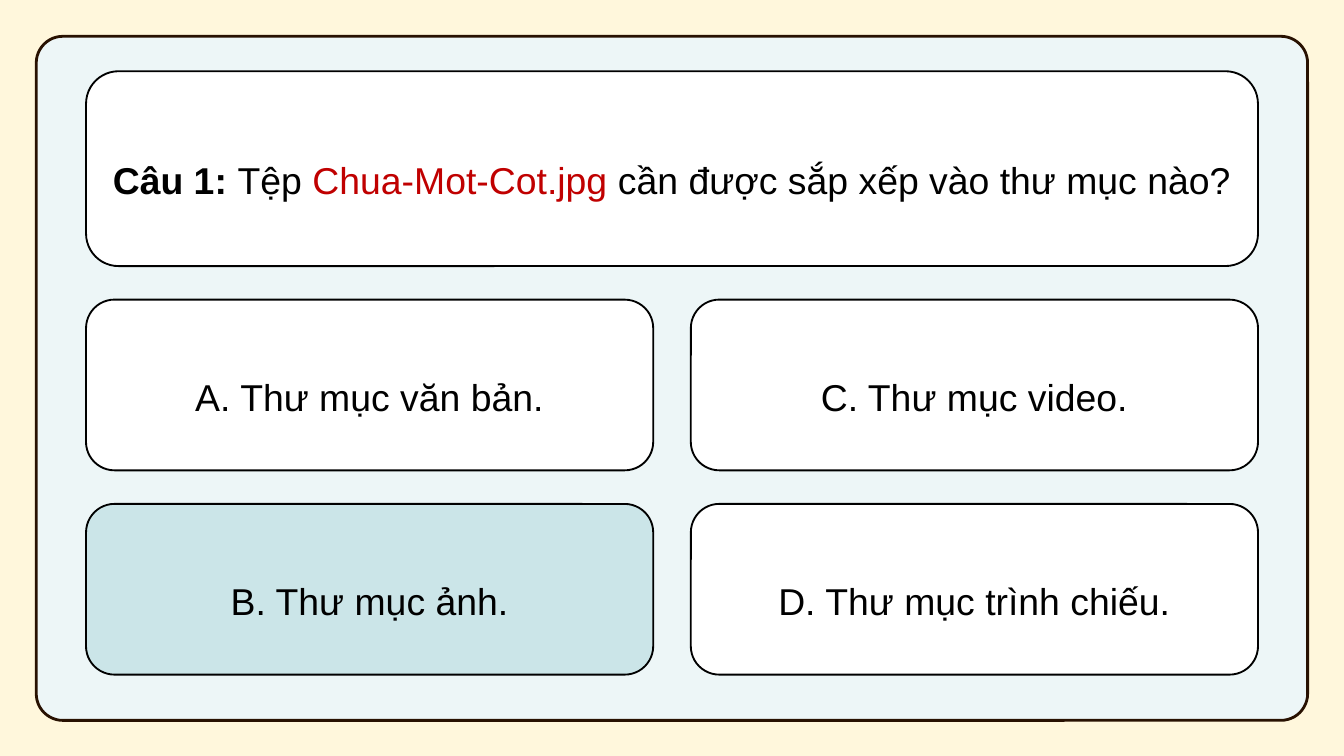
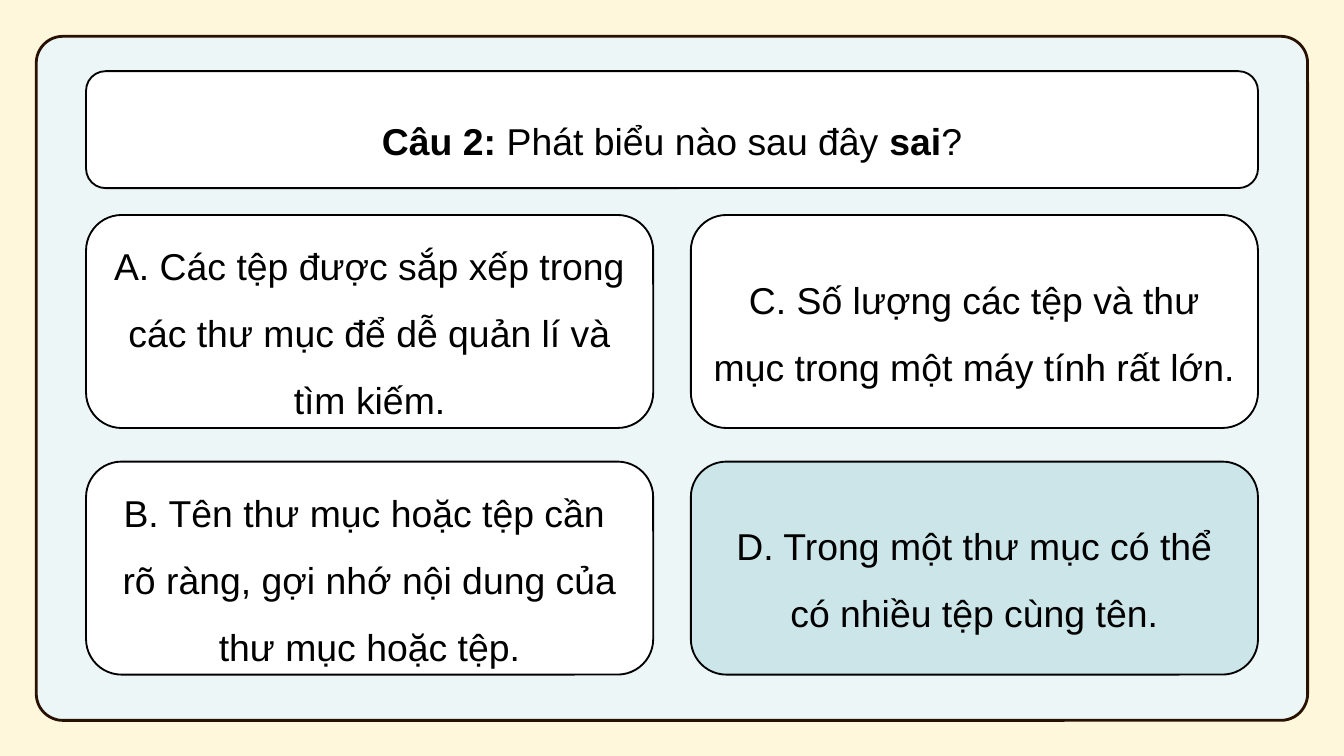
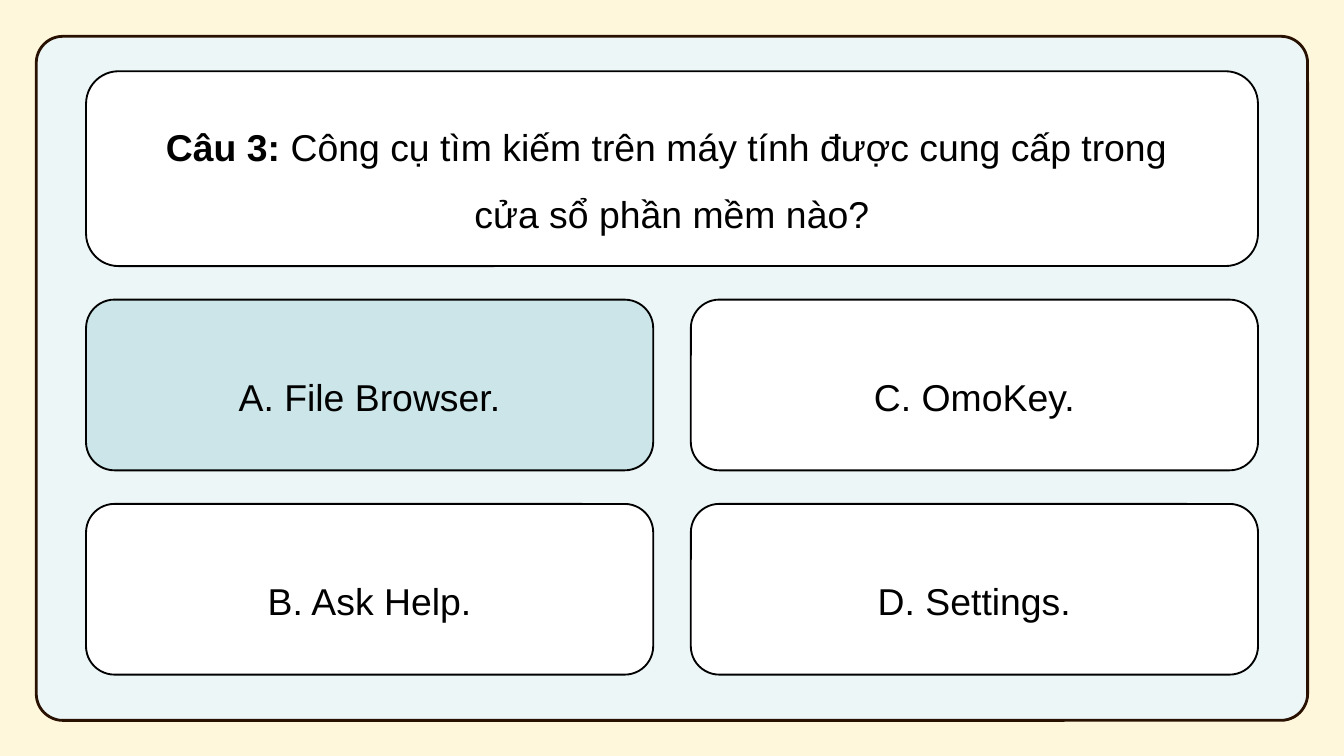
from pptx import Presentation
from pptx.dml.color import RGBColor
from pptx.enum.shapes import MSO_SHAPE as Shape
from pptx.enum.text import MSO_ANCHOR as Anchor, PP_ALIGN as Align
from pptx.util import Inches, Pt

CREAM, MIST, TEAL = "FFF7DC", "EDF6F7", "CBE5E8"
WHITE, BLACK, BROWN, RED = "FFFFFF", "000000", "281101", "C00000"
BOLD = {"bold": True}

QUIZ = [
    {
        "question": [[("Câu 1: ", BOLD), ("Tệp ", {}),
                      ("Chua-Mot-Cot.jpg", {"color": RED}),
                      (" cần được sắp xếp vào thư mục nào?", {})]],
        "answers": [
            ["A. Thư mục văn bản."],
            ["B. Thư mục ảnh."],
            ["C. Thư mục video."],
            ["D. Thư mục trình chiếu."],
        ],
        "correct": "B",
        "question_height": 1.45,
        "answers_top": 2.23,
    },
    {
        "question": [[("Câu 2: ", BOLD), ("Phát biểu nào sau đây ", {}),
                      ("sai", BOLD), ("?", {})]],
        "answers": [
            ["A. Các tệp được sắp xếp trong các thư mục để dễ quản lí và tìm kiếm."],
            ["B. Tên thư mục hoặc tệp cần ",
             "rõ ràng, gợi nhớ nội dung của thư mục hoặc tệp."],
            ["C. Số lượng các tệp và thư mục trong một máy tính rất lớn."],
            ["D. Trong một thư mục có thể có nhiều tệp cùng tên."],
        ],
        "correct": "D",
        "question_height": 0.87,
        "answers_top": 1.6,
    },
    {
        "question": [[("Câu 3: ", BOLD),
                      ("Công cụ tìm kiếm trên máy tính được cung cấp trong ", {})],
                     [("cửa sổ phần mềm nào?", {})]],
        "answers": [
            ["A. File Browser."],
            ["B. Ask Help."],
            ["C. OmoKey."],
            ["D. Settings."],
        ],
        "correct": "A",
        "question_height": 1.45,
        "answers_top": 2.23,
    },
]

WIDTH = 10
SLIDE_WIDTH = Inches(WIDTH)
SLIDE_HEIGHT = SLIDE_WIDTH * 9 // 16
PANEL_MARGIN, PANEL_HEIGHT = 0.27, 5.09
LEFT, QUESTION_TOP, ANSWERS_BOTTOM = 0.64, 0.53, 5.02
CONTENT_WIDTH = WIDTH - 2 * LEFT
COLUMN_GAP, ROW_GAP = 0.28, 0.25
ANSWER_WIDTH = (CONTENT_WIDTH - COLUMN_GAP) / 2


def rgb(color):
    return RGBColor.from_string(color)


def add_card(slide, left, top, width, height, fill=WHITE, line=BLACK,
             weight=1, rounding=0.167):
    card = slide.shapes.add_shape(Shape.ROUNDED_RECTANGLE, Inches(left), Inches(top),
                                  Inches(width), Inches(height))
    card.adjustments[0] = rounding
    card.shadow.inherit = False
    card.fill.solid()
    card.fill.fore_color.rgb = rgb(fill)
    card.line.color.rgb = rgb(line)
    card.line.width = Pt(weight)
    return card


def add_run(paragraph, text, bold=False, color=BLACK, size=20, font="Arial"):
    run = paragraph.add_run()
    run.text = text
    run.font.name = font
    run.font.size = Pt(size)
    run.font.bold = bold
    run.font.color.rgb = rgb(color)


def write(card, paragraphs):
    frame = card.text_frame
    frame.word_wrap = True
    frame.vertical_anchor = Anchor.MIDDLE
    frame.margin_left = frame.margin_right = Inches(0.08)
    frame.margin_top = frame.margin_bottom = Inches(0.04)
    for index, runs in enumerate(paragraphs):
        paragraph = frame.add_paragraph() if index else frame.paragraphs[0]
        paragraph.alignment = Align.CENTER
        paragraph.line_spacing = 1.5
        for text, style in runs:
            add_run(paragraph, text, **style)


def add_quiz_slide(deck, item):
    slide = deck.slides.add_slide(deck.slide_layouts[6])
    add_card(slide, PANEL_MARGIN, PANEL_MARGIN, WIDTH - 2 * PANEL_MARGIN, PANEL_HEIGHT,
             fill=MIST, line=BROWN, weight=1.5, rounding=0.039)
    question = add_card(slide, LEFT, QUESTION_TOP, CONTENT_WIDTH, item["question_height"])
    write(question, item["question"])

    answer_height = (ANSWERS_BOTTOM - item["answers_top"] - ROW_GAP) / 2
    for index, lines in enumerate(item["answers"]):
        column, row = divmod(index, 2)
        answer = add_card(
            slide,
            LEFT + column * (ANSWER_WIDTH + COLUMN_GAP),
            item["answers_top"] + row * (answer_height + ROW_GAP),
            ANSWER_WIDTH,
            answer_height,
            fill=TEAL if lines[0].startswith(item["correct"]) else WHITE,
        )
        write(answer, [[(line, {})] for line in lines])


def main():
    deck = Presentation()
    deck.slide_width, deck.slide_height = SLIDE_WIDTH, SLIDE_HEIGHT
    backdrop = deck.slide_master.background.fill
    backdrop.solid()
    backdrop.fore_color.rgb = rgb(CREAM)
    for item in QUIZ:
        add_quiz_slide(deck, item)
    deck.save("out.pptx")


if __name__ == "__main__":
    main()
